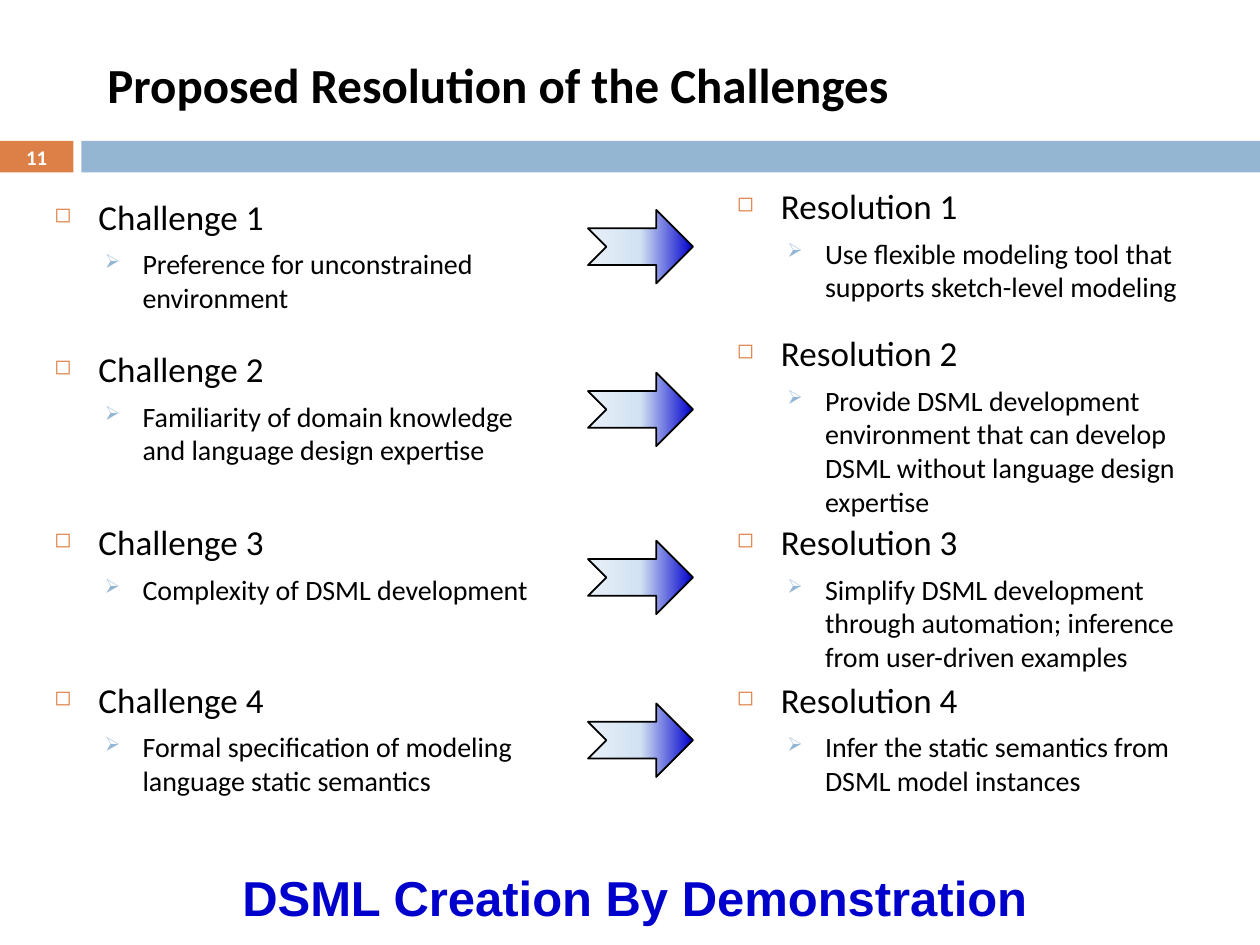
from copy import deepcopy

from lxml.etree import SubElement
from pptx import Presentation
from pptx.dml.color import RGBColor
from pptx.enum.shapes import MSO_SHAPE as Preset
from pptx.enum.text import MSO_ANCHOR as Anchor, PP_ALIGN as Align
from pptx.oxml.ns import qn
from pptx.util import Pt

ORANGE, BLUE, NAVY = "DD8047", "94B6D2", "0000CC"
BLACK, WHITE = "000000", "FFFFFF"
ARROW_STOPS = [(0, NAVY), (0.5, "D2E2F2"), (1, "E8F0F8")]


def colour(code):
    """Turn a hex string into a colour."""
    return RGBColor.from_string(code)


def write(para, text, size=20, font="Calibri", ink=BLACK, bold=False, align=None):
    """Add formatted text to a paragraph."""
    para.alignment = align
    span = para.add_run()
    span.text = text
    span.font.size = Pt(size)
    span.font.name = font
    span.font.bold = bold
    span.font.color.rgb = colour(ink)


def add_bullet(para, sign, ink, percent, margin, hanging, before):
    """Give a paragraph a coloured bullet with a hanging indent."""
    para.space_before = Pt(before)
    props = para._p.get_or_add_pPr()
    props.set("marL", str(Pt(margin)))
    props.set("indent", str(-Pt(hanging)))
    tint = SubElement(props, qn("a:buClr"))
    SubElement(tint, qn("a:srgbClr"), val=ink)
    SubElement(props, qn("a:buSzPct"), val=str(percent * 1000))
    SubElement(props, qn("a:buChar"), char=sign)


class Painter:
    """Draws the elements of one page in a common style."""

    def __init__(self, page):
        self.page = page

    def shape(self, preset, left, top, width, height):
        """Add a preset shape without shadow."""
        item = self.page.shapes.add_shape(preset, Pt(left), Pt(top), Pt(width), Pt(height))
        item.shadow.inherit = False
        return item

    def bar(self, left, top, width, height, fill):
        """Add a plain filled rectangle."""
        item = self.shape(Preset.RECTANGLE, left, top, width, height)
        item.fill.solid()
        item.fill.fore_color.rgb = colour(fill)
        item.line.fill.background()

    def arrow(self, left, top, width=60, height=42):
        """Add a notched arrow with a gradient."""
        item = self.shape(Preset.NOTCHED_RIGHT_ARROW, left, top, width, height)
        item.fill.gradient()
        item.fill.gradient_angle = 180
        stop_list = item.fill._fill._gradFill.gsLst
        stop_list.append(deepcopy(stop_list[-1]))
        for stop, (position, code) in zip(item.fill.gradient_stops, ARROW_STOPS):
            stop.position = position
            stop.color.rgb = colour(code)
        item.line.color.rgb = colour(BLACK)
        item.line.width = Pt(1)

    def box(self, left, top, width, height, anchor=Anchor.TOP, wrap=True):
        """Add an empty text box and return its frame."""
        item = self.page.shapes.add_textbox(Pt(left), Pt(top), Pt(width), Pt(height))
        frame = item.text_frame
        frame.word_wrap = wrap
        frame.vertical_anchor = anchor
        return frame

    def label(self, text, left, top, width, height, anchor=Anchor.MIDDLE, wrap=True, **style):
        """Add a text box with one line of text."""
        frame = self.box(left, top, width, height, anchor, wrap)
        write(frame.paragraphs[0], text, **style)

    def topic(self, heading, detail, left, top, height):
        """Add a bulleted heading with a bulleted detail below it."""
        frame = self.box(left, top, 294, height)
        head = frame.paragraphs[0]
        add_bullet(head, "◻", ORANGE, 60, 25.2, 25.2, before=7)
        write(head, heading)
        body = frame.add_paragraph()
        body.level = 1
        add_bullet(body, "➢", BLUE, 70, 50.4, 21.6, before=5.5)
        write(body, detail, size=16)


ROWS = [
    ("Preference for unconstrained environment", 108, 78,
     "Use flexible modeling tool that supports sketch-level modeling", 102, 78, 120),
    ("Familiarity of domain knowledge and language design expertise", 195, 78,
     "Provide DSML development environment that can develop DSML without "
     "language design expertise", 186, 96, 213),
    ("Complexity of DSML development", 294, 72,
     "Simplify DSML development through automation; inference from "
     "user-driven examples", 294, 72, 309),
    ("Formal specification of modeling language static semantics", 384, 78,
     "Infer the static semantics from DSML model instances", 384, 78, 402),
]


def main():
    """Build the slide and save it."""
    deck = Presentation()
    deck.slide_width, deck.slide_height = Pt(720), Pt(540)
    painter = Painter(deck.slides.add_slide(deck.slide_layouts[6]))
    painter.bar(0, 80.5, 42, 18, ORANGE)
    painter.bar(46.5, 80.5, 673.5, 18, BLUE)
    painter.label(" Proposed Resolution of the Challenges", 48, 18, 642, 60, size=28, bold=True)
    painter.label("11", 0, 80, 42, 19.5, size=11.9, ink=WHITE, bold=True, align=Align.CENTER)
    for number, row in enumerate(ROWS, start=1):
        challenge, left_top, left_height, resolution, right_top, right_height, arrow_top = row
        painter.topic(f"Challenge {number}", challenge, 24, left_top, left_height)
        painter.topic(f"Resolution {number}", resolution, 414, right_top, right_height)
        painter.arrow(336, arrow_top)
    painter.label("DSML Creation By Demonstration", 126, 492, 468, 36, Anchor.TOP, wrap=False,
                  size=28, font="Arial", ink=NAVY, bold=True, align=Align.RIGHT)
    deck.save("out.pptx")


if __name__ == "__main__":
    main()
